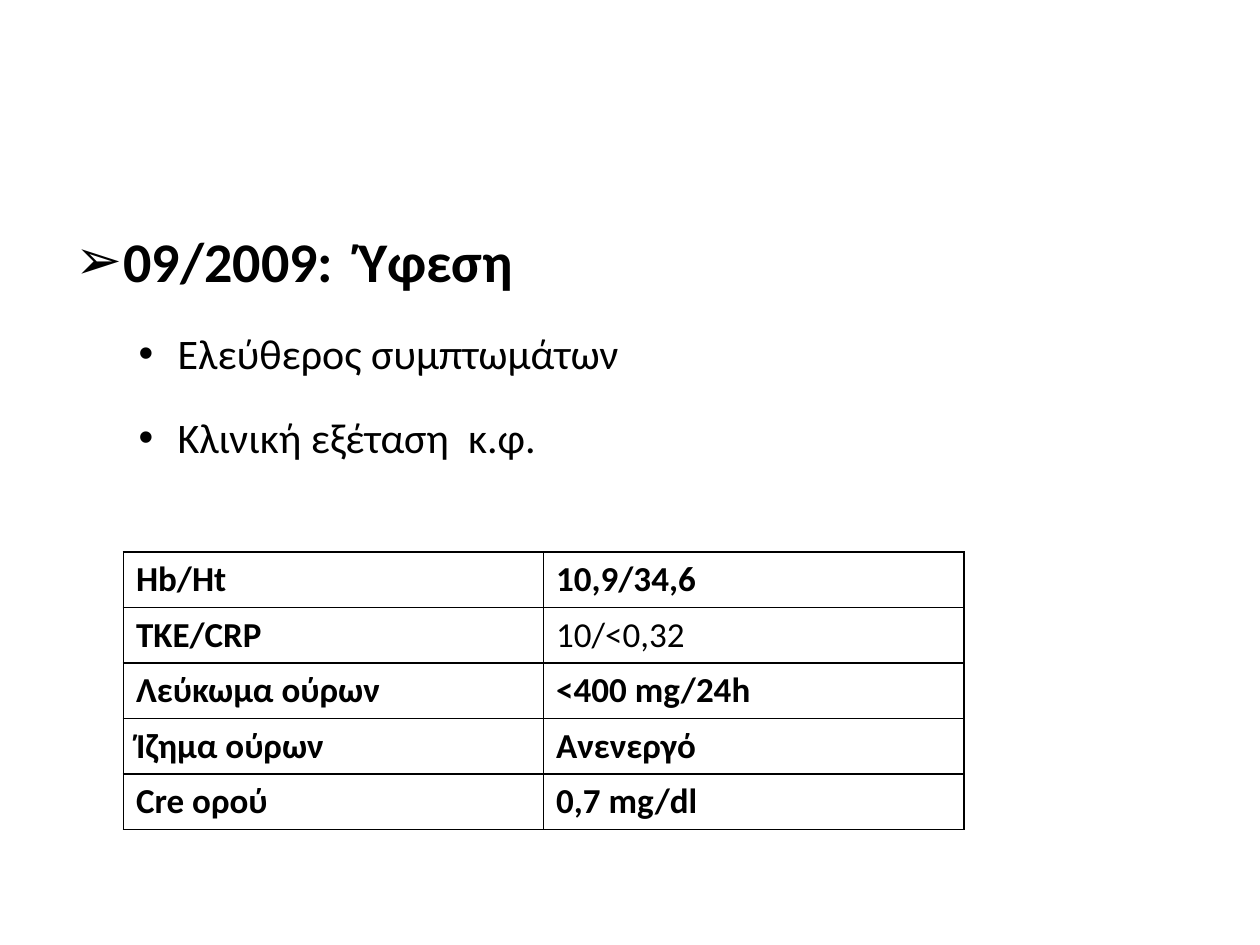
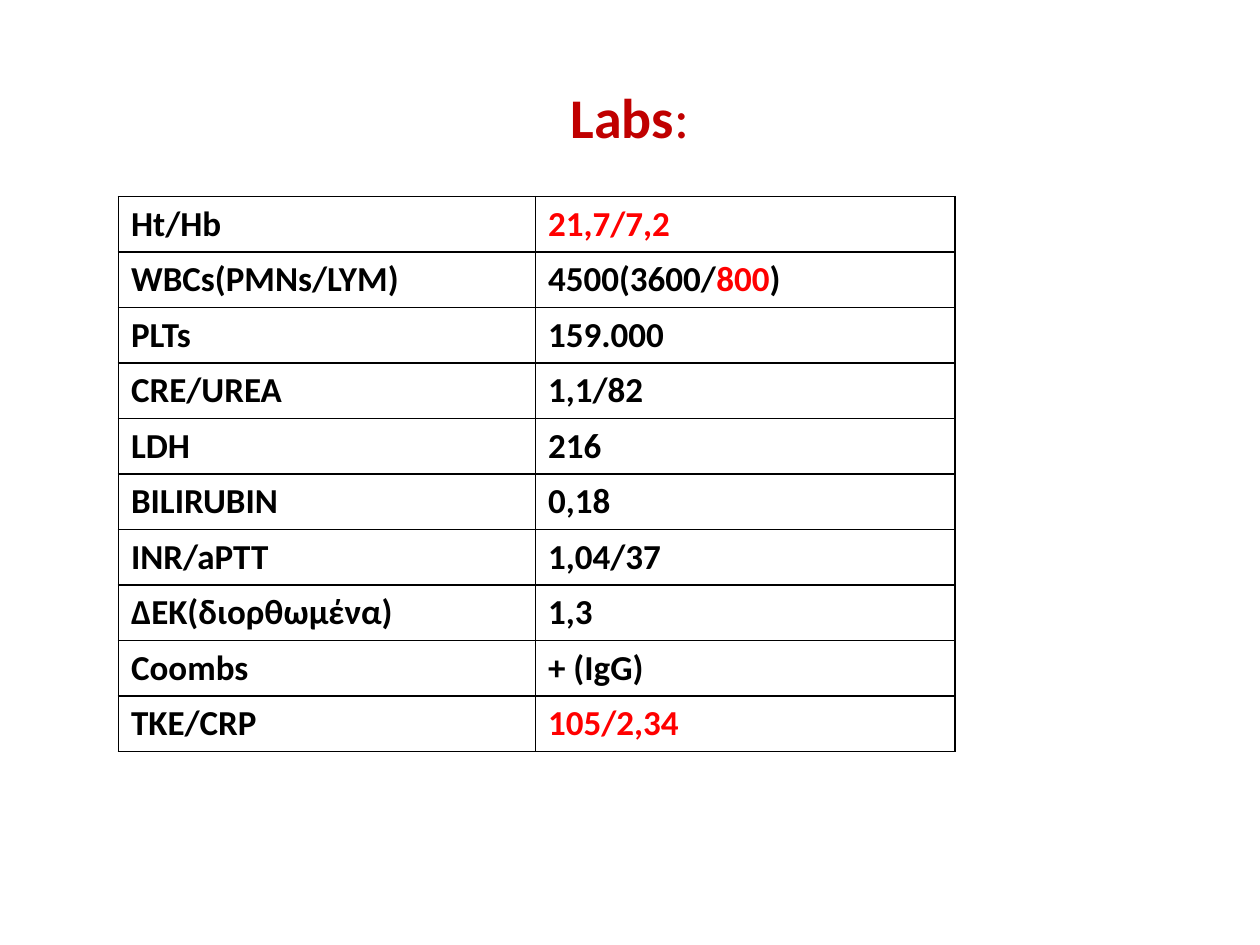
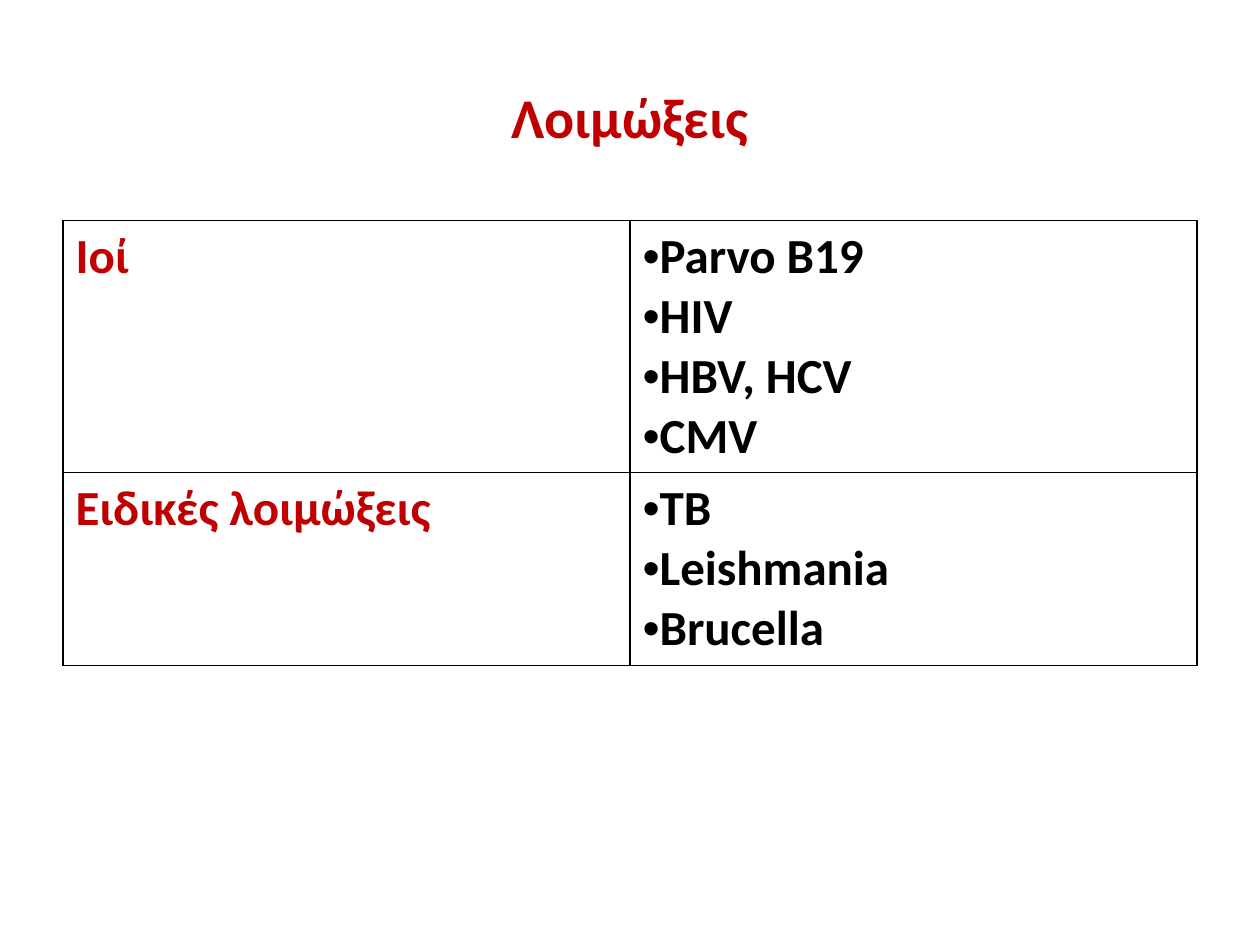
from lxml import etree
from pptx import Presentation
from pptx.dml.color import RGBColor
from pptx.enum.text import MSO_ANCHOR, MSO_AUTO_SIZE, PP_ALIGN
from pptx.oxml.ns import qn
from pptx.util import Inches, Pt

CENTER, LEFT = PP_ALIGN.CENTER, PP_ALIGN.LEFT
TOP, MIDDLE = MSO_ANCHOR.TOP, MSO_ANCHOR.MIDDLE
FIXED = MSO_AUTO_SIZE.NONE
BODY, TITLED = 1, 5
COLORS = {"text": "000000", "head": "C00000", "alert": "FF0000", "line": "000000"}
FONT = "Calibri"
COLS, ROWS = 20, 15
WIDE, HIGH = Inches(10), Inches(7.5)


def col(n):
    return round(WIDE * n / COLS)


def row(n):
    return round(HIGH * n / ROWS)


def paint(color, name):
    color.rgb = RGBColor.from_string(COLORS[name])


def mark(para, char, left, hang):
    """Give a paragraph a bullet and its indent, in inches."""
    props = para._p.get_or_add_pPr()
    props.set("marL", str(Inches(left)))
    props.set("indent", str(Inches(-hang)))
    etree.SubElement(props, qn("a:buFont"), typeface="Arial")
    etree.SubElement(props, qn("a:buChar"), char=char)


def write(para, text, size=20, color="text", bold=True, align=LEFT,
          level=0, space=None, bullet=None, left=0, hang=0):
    """Fill a paragraph; text is a string or a list of (string, changes) runs."""
    para.alignment, para.level = align, level
    if space:
        para.line_spacing = space
    if bullet:
        mark(para, bullet, left, hang)
    for part, change in [(text, {})] if isinstance(text, str) else text:
        run = para.add_run()
        run.text = part
        run.font.name, run.font.size = FONT, Pt(size)
        run.font.bold = change.get("bold", bold)
        paint(run.font.color, change.get("color", color))


def fill(frame, items):
    """Write (text, format) pairs as the paragraphs of a frame."""
    for i, (text, form) in enumerate(items):
        para = frame.add_paragraph() if i else frame.paragraphs[0]
        write(para, text, **form)


class Deck:
    def __init__(self):
        self.file = Presentation()
        self.file.slide_width, self.file.slide_height = WIDE, HIGH
        self.slide = None

    def start(self, kind):
        self.slide = self.file.slides.add_slide(self.file.slide_layouts[kind])

    def place(self, shape, x, y, w, h, anchor, items):
        shape.left, shape.top, shape.width, shape.height = col(x), row(y), col(w), row(h)
        frame = shape.text_frame
        frame.word_wrap, frame.auto_size = True, FIXED
        frame.vertical_anchor = anchor
        fill(frame, items)

    def title(self, text):
        self.start(TITLED)
        form = dict(size=32, color="head", align=CENTER)
        self.place(self.slide.shapes.title, 1, 0.6, 18, 2.5, MIDDLE, [(text, form)])

    def body(self, items):
        self.start(BODY)
        head = self.slide.shapes.title._element
        head.getparent().remove(head)
        self.place(self.slide.placeholders[1], 1, 3.5, 18, 9.9, TOP, items)

    def edge(self, cell):
        cell.fill.background()
        props = cell._tc.get_or_add_tcPr()
        for i, side in enumerate(("lnL", "lnR", "lnT", "lnB")):
            line = etree.Element(qn("a:" + side), w=str(Pt(1)))
            ink = etree.SubElement(line, qn("a:solidFill"))
            etree.SubElement(ink, qn("a:srgbClr"), val=COLORS["line"])
            props.insert(i, line)

    def table(self, x, y, widths, heights, data):
        """Draw rows of cells, each cell a list of (text, format) pairs."""
        grid = self.slide.shapes.add_table(
            len(heights), len(widths), col(x), row(y),
            col(sum(widths)), row(sum(heights))).table
        grid.first_row = grid.horz_banding = False
        for c, width in enumerate(widths):
            grid.columns[c].width = col(width)
        for r, height in enumerate(heights):
            grid.rows[r].height = row(height)
            for c, items in enumerate(data[r]):
                cell = grid.cell(r, c)
                self.edge(cell)
                fill(cell.text_frame, items)

    def labs(self, x, y, widths, data):
        cells = [[[(text, {})] for text in pair] for pair in data]
        self.table(x, y, widths, [0.86] * len(data), cells)


def alert(text):
    return (text, {"color": "alert"})


def relapse(deck):
    point = dict(size=24, bold=False, level=1, space=1.5, bullet="•", left=0.81, hang=0.31)
    deck.body([
        ("09/2009:  Ύφεση", dict(size=32, bullet="➢", left=0.38, hang=0.38)),
        ("Ελεύθερος συμπτωμάτων", point),
        ("Κλινική εξέταση  κ.φ.", point),
    ])
    deck.labs(1.96, 8.76, [6.67, 6.67], [
        ("Hb/Ht", "10,9/34,6"),
        ("ΤΚΕ/CRP", [("10/<0,32", {"bold": False})]),
        ("Λεύκωμα ούρων", "<400 mg/24h"),
        ("Ίζημα ούρων", "Ανενεργό"),
        ("Cre ορού", "0,7 mg/dl"),
    ])


def tests(deck):
    deck.title([("Labs", {}), (":", {"bold": False})])
    deck.labs(1.88, 3.12, [6.62, 6.66], [
        ("Ht/Hb", [alert("21,7/7,2")]),
        ("WBCs(PMNs/LYM)", [("4500(3600/", {}), alert("800"), (")", {})]),
        ("PLTs", "159.000"),
        ("CRE/UREA", "1,1/82"),
        ("LDH", "216"),
        ("BILIRUBIN", "0,18"),
        ("INR/aPTT", "1,04/37"),
        ("ΔΕΚ(διορθωμένα)", "1,3"),
        ("Coombs", "+ (IgG)"),
        ("ΤΚΕ/CRP", [alert("105/2,34")]),
    ])


def germs(deck):
    deck.title("Λοιμώξεις")
    groups = {
        "Ιοί": ["Parvo B19", "HIV", "HBV, HCV", "CMV"],
        "Ειδικές λοιμώξεις": ["TB", "Leishmania", "Brucella"],
    }
    name, point = dict(size=28, color="head"), dict(size=28, bullet="•")
    cells = [[[(group, name)], [(germ, point) for germ in found]]
             for group, found in groups.items()]
    deck.table(1, 3.5, [9, 9], [4, 3.06], cells)


def main():
    deck = Deck()
    for build in (relapse, tests, germs):
        build(deck)
    deck.file.save("out.pptx")


if __name__ == "__main__":
    main()
